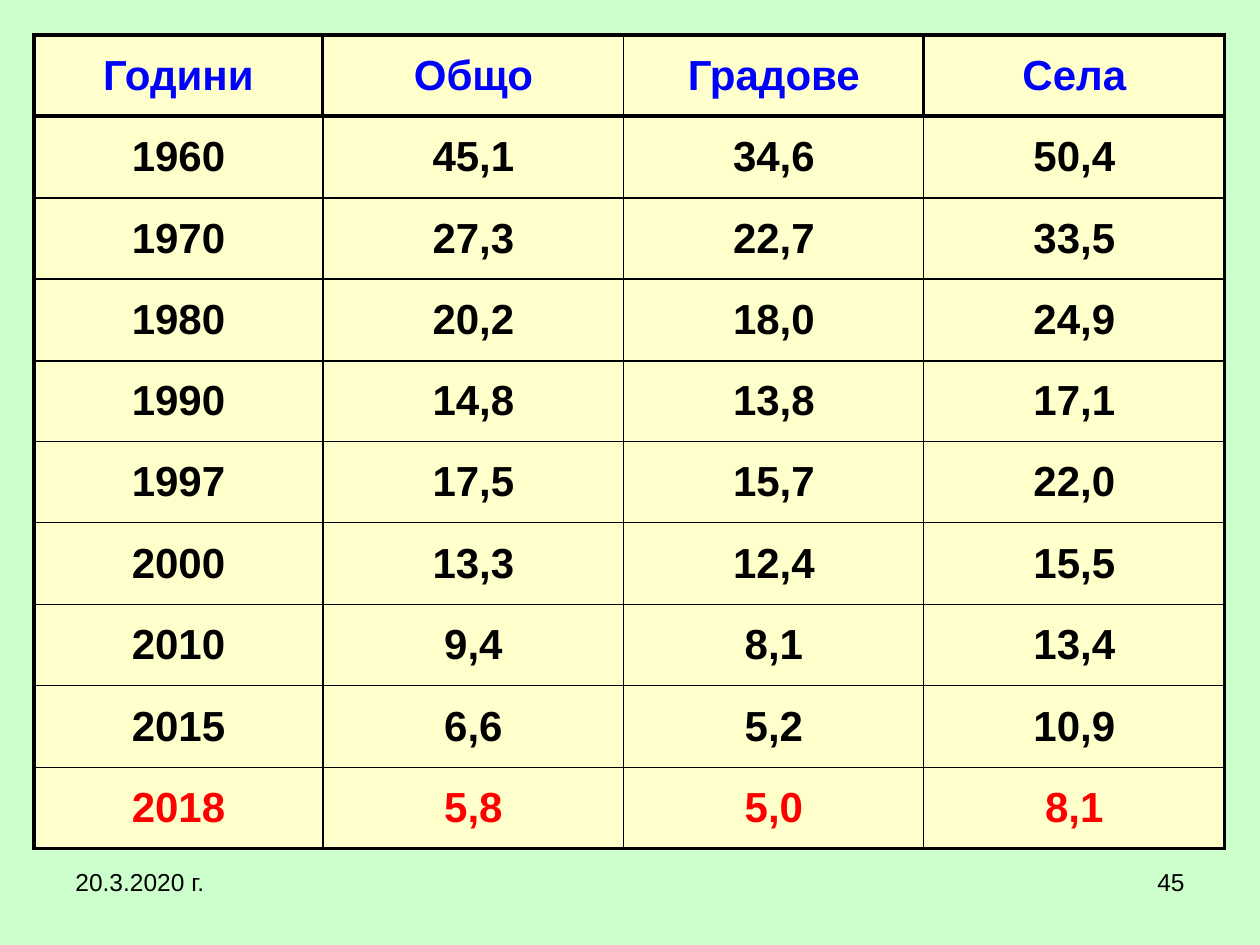
from dataclasses import dataclass

from lxml import etree
from pptx import Presentation
from pptx import util as u
from pptx.dml import color
from pptx.enum import text
from pptx.oxml import ns

EMU_PER_PX = u.Inches(1) / 126


@dataclass(frozen=True)
class Theme:
    font: str = "Arial"
    page: str = "CCFFCC"
    cell: str = "FFFFCC"
    ink: str = "000000"
    header: str = "0000FF"
    latest: str = "FF0000"
    table_size: int = 24
    footer_size: int = 14
    thin: float = 0.75
    thick: float = 2


@dataclass(frozen=True)
class Box:
    left: int
    top: int
    width: int
    height: int

    def emu(self) -> tuple:
        return tuple(px(v) for v in (self.left, self.top, self.width, self.height))


@dataclass(frozen=True)
class Footer:
    words: str
    box: Box
    align: text.PP_ALIGN


THEME = Theme()
TABLE = Box(34, 35, 1191, 814)
YEAR_WIDTH = 289
THICK_HEADER_EDGES = (0, 1, 3, 4)
ROWS = [
    ("Години", "Общо", "Градове", "Села"),
    ("1960", "45,1", "34,6", "50,4"),
    ("1970", "27,3", "22,7", "33,5"),
    ("1980", "20,2", "18,0", "24,9"),
    ("1990", "14,8", "13,8", "17,1"),
    ("1997", "17,5", "15,7", "22,0"),
    ("2000", "13,3", "12,4", "15,5"),
    ("2010", "9,4", "8,1", "13,4"),
    ("2015", "6,6", "5,2", "10,9"),
    ("2018", "5,8", "5,0", "8,1"),
]
FOOTERS = [
    Footer("45", Box(903, 861, 294, 65), text.PP_ALIGN.RIGHT),
    Footer("20.3.2020 г.", Box(63, 861, 294, 65), text.PP_ALIGN.LEFT),
]


def px(length: int) -> int:
    return u.Emu(round(length * EMU_PER_PX))


def split(total: int, count: int) -> list[int]:
    edges = [round(total * i / count) for i in range(count + 1)]
    return [end - start for start, end in zip(edges, edges[1:])]


def write(para, words: str, size: int, ink: str, align, bold: bool = False) -> None:
    para.alignment = align
    span = para.add_run()
    span.text = words
    span.font.name = THEME.font
    span.font.size = u.Pt(size)
    span.font.bold = bold
    span.font.color.rgb = color.RGBColor.from_string(ink)


def add_border(cell, side: str, thick: bool) -> None:
    width = u.Pt(THEME.thick if thick else THEME.thin)
    properties = cell._tc.get_or_add_tcPr()
    line = etree.SubElement(properties, ns.qn(f"a:ln{side}"), w=str(int(width)))
    fill = etree.SubElement(line, ns.qn("a:solidFill"))
    etree.SubElement(fill, ns.qn("a:srgbClr"), val=THEME.ink)


def vertical_is_thick(row: int, edge: int) -> bool:
    return edge in (THICK_HEADER_EDGES if row == 0 else (0, len(ROWS[0])))


def horizontal_is_thick(edge: int) -> bool:
    return edge in (0, 1, len(ROWS))


def draw_cell(cell, words: str, row: int, column: int) -> None:
    add_border(cell, "L", vertical_is_thick(row, column))
    add_border(cell, "R", vertical_is_thick(row, column + 1))
    add_border(cell, "T", horizontal_is_thick(row))
    add_border(cell, "B", horizontal_is_thick(row + 1))
    cell.fill.solid()
    cell.fill.fore_color.rgb = color.RGBColor.from_string(THEME.cell)
    cell.vertical_anchor = text.MSO_ANCHOR.MIDDLE
    ink = {0: THEME.header, len(ROWS) - 1: THEME.latest}.get(row, THEME.ink)
    write(cell.text_frame.paragraphs[0], words, THEME.table_size, ink,
          text.PP_ALIGN.CENTER, bold=True)


def draw_table(page) -> None:
    columns = len(ROWS[0])
    table = page.shapes.add_table(len(ROWS), columns, *TABLE.emu()).table
    table.first_row = False
    table.horz_banding = False
    widths = [YEAR_WIDTH, *split(TABLE.width - YEAR_WIDTH, columns - 1)]
    for column, width in zip(table.columns, widths):
        column.width = px(width)
    for row, height in zip(table.rows, split(TABLE.height, len(ROWS))):
        row.height = px(height)
    for r, values in enumerate(ROWS):
        for c, words in enumerate(values):
            draw_cell(table.cell(r, c), words, r, c)


def draw_footer(page, footer: Footer) -> None:
    frame = page.shapes.add_textbox(*footer.box.emu()).text_frame
    frame.word_wrap = True
    write(frame.paragraphs[0], footer.words, THEME.footer_size, THEME.ink, footer.align)


def main() -> None:
    deck = Presentation()
    deck.slide_width, deck.slide_height = px(1260), px(945)
    page = deck.slides.add_slide(deck.slide_layouts[6])
    page.background.fill.solid()
    page.background.fill.fore_color.rgb = color.RGBColor.from_string(THEME.page)
    draw_table(page)
    for footer in FOOTERS:
        draw_footer(page, footer)
    deck.save("out.pptx")


if __name__ == "__main__":
    main()
